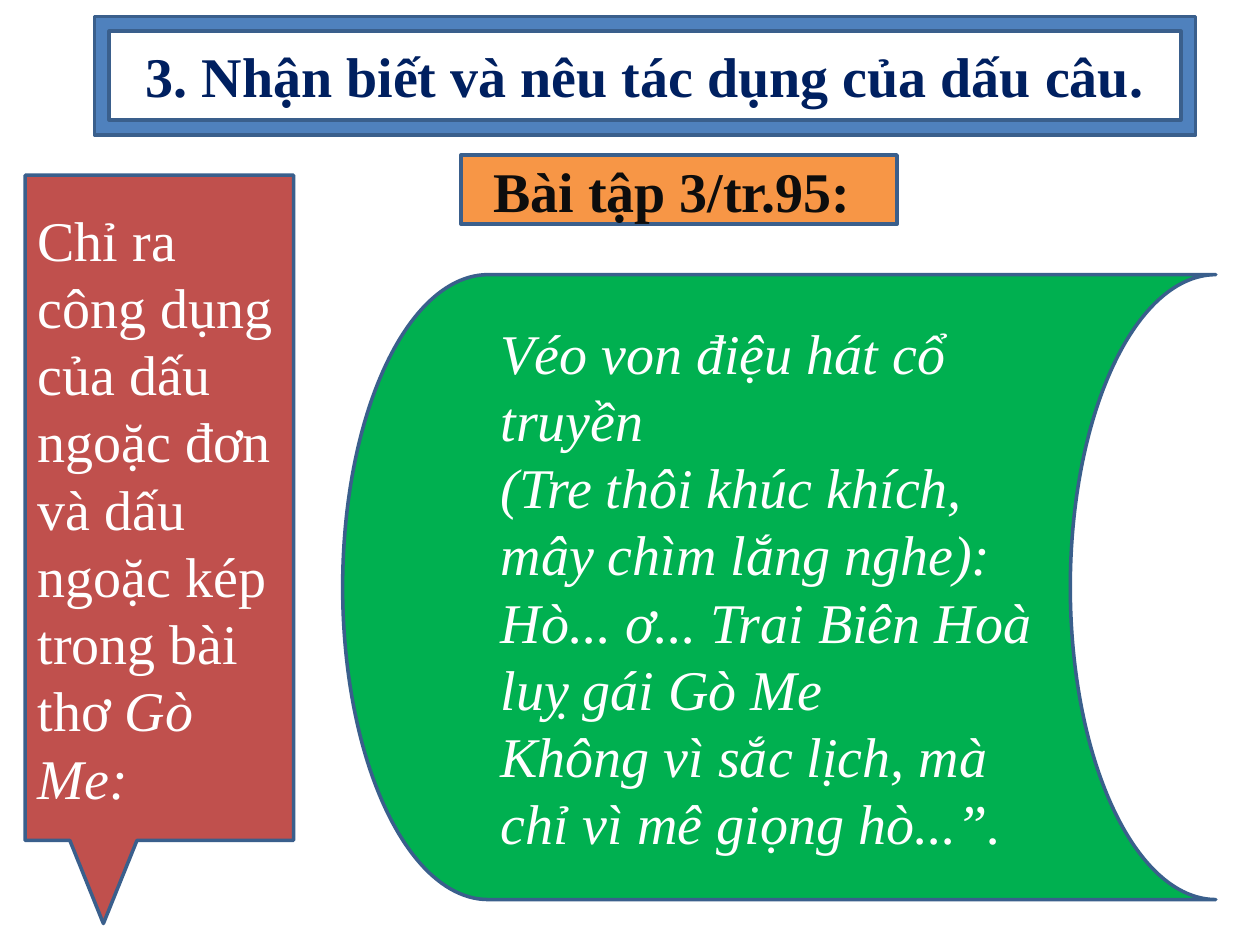
from pptx import Presentation
from pptx.dml.color import RGBColor
from pptx.enum.shapes import MSO_SHAPE as Kind
from pptx.enum.text import MSO_ANCHOR as Anchor, PP_ALIGN as Align
from pptx.util import Inches, Pt


def paint(target, color):
    target.rgb = RGBColor.from_string(color)


def add_box(slide, kind, place, fill):
    box = slide.shapes.add_shape(kind, *map(Inches, place))
    box.shadow.inherit = False
    box.fill.solid()
    paint(box.fill.fore_color, fill)
    paint(box.line.color, "3A5F8C")
    box.line.width = Pt(2)
    frame = box.text_frame
    frame.word_wrap = True
    frame.vertical_anchor = Anchor.MIDDLE
    return frame


def style(frame, color, align=Align.LEFT, bold=False, italic=False):
    for para in frame.paragraphs:
        para.alignment = align
        for run in para.runs:
            font = run.font
            font.name = "Times New Roman"
            font.size = Pt(32)
            font.bold = bold
            font.italic = italic
            paint(font.color, color)


def add_label(slide, kind, place, fill, text, color):
    frame = add_box(slide, kind, place, fill)
    frame.text = text
    style(frame, color, Align.CENTER, bold=True)


def add_task(slide, text, title):
    frame = add_box(slide, Kind.RECTANGULAR_CALLOUT,
                    (0.2, 1.39, 2.13, 5.28), "C0504D")
    frame.text = text
    run = frame.paragraphs[0].add_run()
    run.text = title
    style(frame, "FFFFFF")
    run.font.italic = True


def add_poem(slide, lines):
    frame = add_box(slide, Kind.FLOWCHART_STORED_DATA,
                    (2.72, 2.18, 6.93, 4.96), "00B050")
    frame.text = "\n".join(lines)
    style(frame, "FFFFFF", italic=True)


def main():
    deck = Presentation()
    deck.slide_width = Inches(10)
    deck.slide_height = Inches(7.5)
    slide = deck.slides.add_slide(deck.slide_layouts[6])
    add_label(slide, Kind.FRAME, (0.75, 0.13, 8.74, 0.94), "4F81BD",
              "3. Nhận biết và nêu tác dụng của dấu câu.", "002060")
    add_task(slide, "Chỉ ra công dụng của dấu ngoặc đơn và dấu ngoặc kép "
             "trong bài thơ ", "Gò Me:")
    add_label(slide, Kind.RECTANGLE, (3.66, 1.23, 3.46, 0.55), "F79646",
              "Bài tập 3/tr.95: ", "0D0D0D")
    add_poem(slide, [
        "Véo von điệu hát cổ truyền",
        "(Tre thôi khúc khích, mây chìm lắng nghe):",
        "Hò... ơ... Trai Biên Hoà luỵ gái Gò Me",
        "Không vì sắc lịch, mà chỉ vì mê giọng hò...”.",
    ])
    deck.save("out.pptx")


if __name__ == "__main__":
    main()
